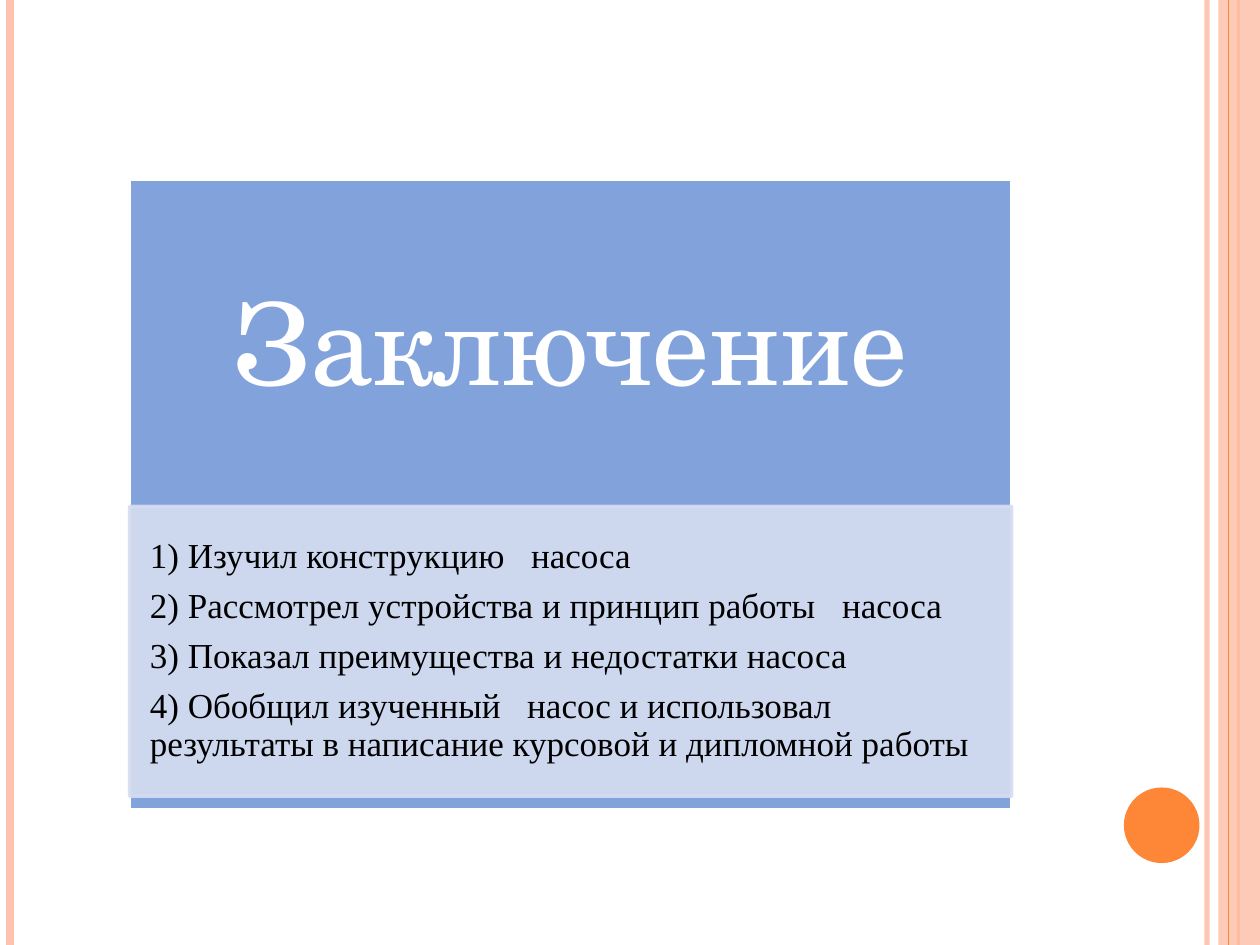
from lxml import etree
from pptx import Presentation
from pptx.dml.color import RGBColor
from pptx.enum.shapes import MSO_CONNECTOR, MSO_SHAPE
from pptx.enum.text import MSO_ANCHOR, PP_ALIGN
from pptx.oxml.ns import qn
from pptx.util import Pt

RECT, OVAL, STRAIGHT = MSO_SHAPE.RECTANGLE, MSO_SHAPE.OVAL, MSO_CONNECTOR.STRAIGHT
LEFT, CENTER, MIDDLE = PP_ALIGN.LEFT, PP_ALIGN.CENTER, MSO_ANCHOR.MIDDLE

WIDTH, HEIGHT = 720, 540
PEACH, ORANGE, BLUE, PALE, WHITE, BLACK = (
    "FEC3AE", "FE8637", "7598D9", "D6DDF1", "FFFFFF", "000000")

TITLE = "Заключение"
GAP = "|"  # marks a widened word space
CONCLUSIONS = [
    "1) Изучил конструкцию|насоса",
    "2) Рассмотрел устройства и принцип работы|насоса",
    "3) Показал преимущества и недостатки насоса",
    "4) Обобщил изученный|насос и использовал результаты в написание "
    "курсовой и дипломной работы",
]

# x, colour, width, opacity in percent
STRIPES_BEHIND = [(689.76, PEACH, 3, 93), (5.76, PEACH, 4.5, 100), (707.76, ORANGE, 1.5, 100)]
STRIPE_FRONT = (702, ORANGE, 0.75, 100)
EDGE_BAND = (696.24, 0, 23.76, HEIGHT)
DISC = (642.24, 450, 43.2, 43.2)

PANEL_LEFT, PANEL_TOP, PANEL_WIDTH = 74.16, 102.24, 504
PANEL = (PANEL_LEFT, PANEL_TOP, PANEL_WIDTH, 360.72)
TITLE_AREA = (PANEL_LEFT, PANEL_TOP, PANEL_WIDTH, 194.4)
LIST_AREA = (PANEL_LEFT, 289.44, PANEL_WIDTH, 165.6)


def paint(fill, color, opacity=100):
    fill.solid()
    fill.fore_color.rgb = RGBColor.from_string(color)
    if opacity < 100:
        node = fill._xPr.find(f"{qn('a:solidFill')}/{qn('a:srgbClr')}")
        etree.SubElement(node, qn("a:alpha"), val=str(opacity * 1000))


def add_stripe(slide, x, color, width, opacity):
    stripe = slide.shapes.add_connector(STRAIGHT, Pt(x), 0, Pt(x), Pt(HEIGHT))
    stripe.line.width = Pt(width)
    paint(stripe.line.fill, color, opacity)
    etree.SubElement(stripe._element.spPr, qn("a:effectLst"))


def add_block(slide, kind, bounds, color, opacity=100, outline=None, outline_opacity=100):
    block = slide.shapes.add_shape(kind, *map(Pt, bounds))
    block.shadow.inherit = False
    paint(block.fill, color, opacity)
    if outline:
        block.line.width = Pt(2)
        paint(block.line.fill, outline, outline_opacity)
    else:
        block.line.fill.background()
    return block


def write(box, lines, font, size, color, align, side, edge, after=0):
    frame = box.text_frame
    frame.word_wrap = True
    frame.vertical_anchor = MIDDLE
    frame.margin_left = frame.margin_right = Pt(side)
    frame.margin_top = frame.margin_bottom = Pt(edge)
    for index, line in enumerate(lines):
        para = frame.add_paragraph() if index else frame.paragraphs[0]
        para.alignment = align
        para.line_spacing = 0.9
        para.space_after = Pt(after)
        before, gap, rest = line.partition(GAP)
        for text in filter(None, (before, gap, rest)):
            span = para.add_run()
            span.text = " " if text == GAP else text
            span.font.name = font
            span.font.size = Pt(size)
            span.font.color.rgb = RGBColor.from_string(color)
            if text == GAP:
                span.font._element.set("spc", "1000")


deck = Presentation()
deck.slide_width, deck.slide_height = Pt(WIDTH), Pt(HEIGHT)
slide = deck.slides.add_slide(deck.slide_layouts[6])

for stripe in STRIPES_BEHIND:
    add_stripe(slide, *stripe)
add_block(slide, RECT, EDGE_BAND, PEACH, 87)
add_stripe(slide, *STRIPE_FRONT)
add_block(slide, OVAL, DISC, ORANGE)

add_block(slide, RECT, PANEL, BLUE, 90, WHITE)
title_box = slide.shapes.add_textbox(*map(Pt, TITLE_AREA))
write(title_box, [TITLE], "TeX Gyre Schola", 65, WHITE, CENTER, side=36.72, edge=36.72)
list_box = add_block(slide, RECT, LIST_AREA, PALE, 90, PALE, 90)
write(list_box, CONCLUSIONS, "Times New Roman", 20, BLACK, LEFT, side=11.52, edge=2.16, after=7)

deck.save("out.pptx")
